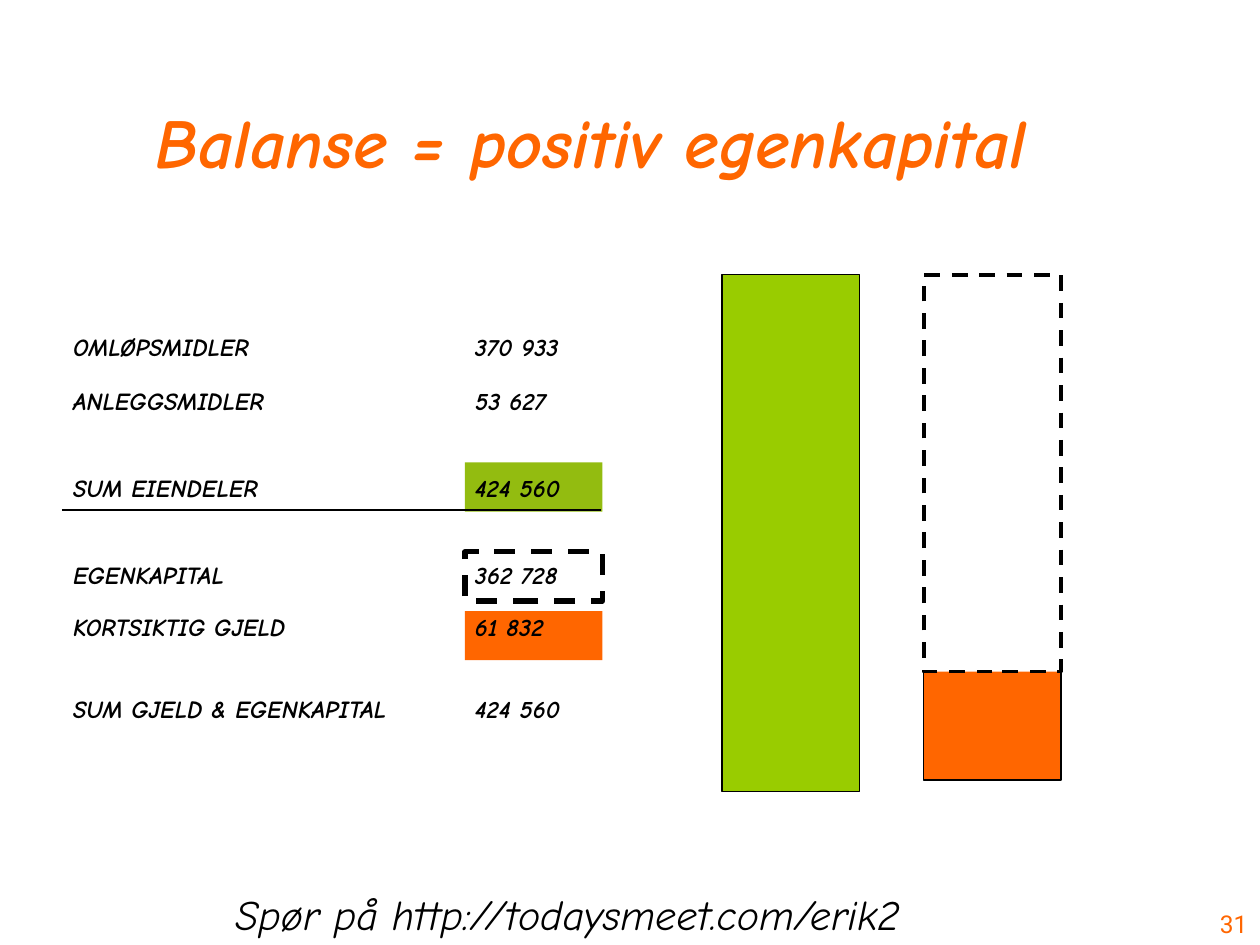
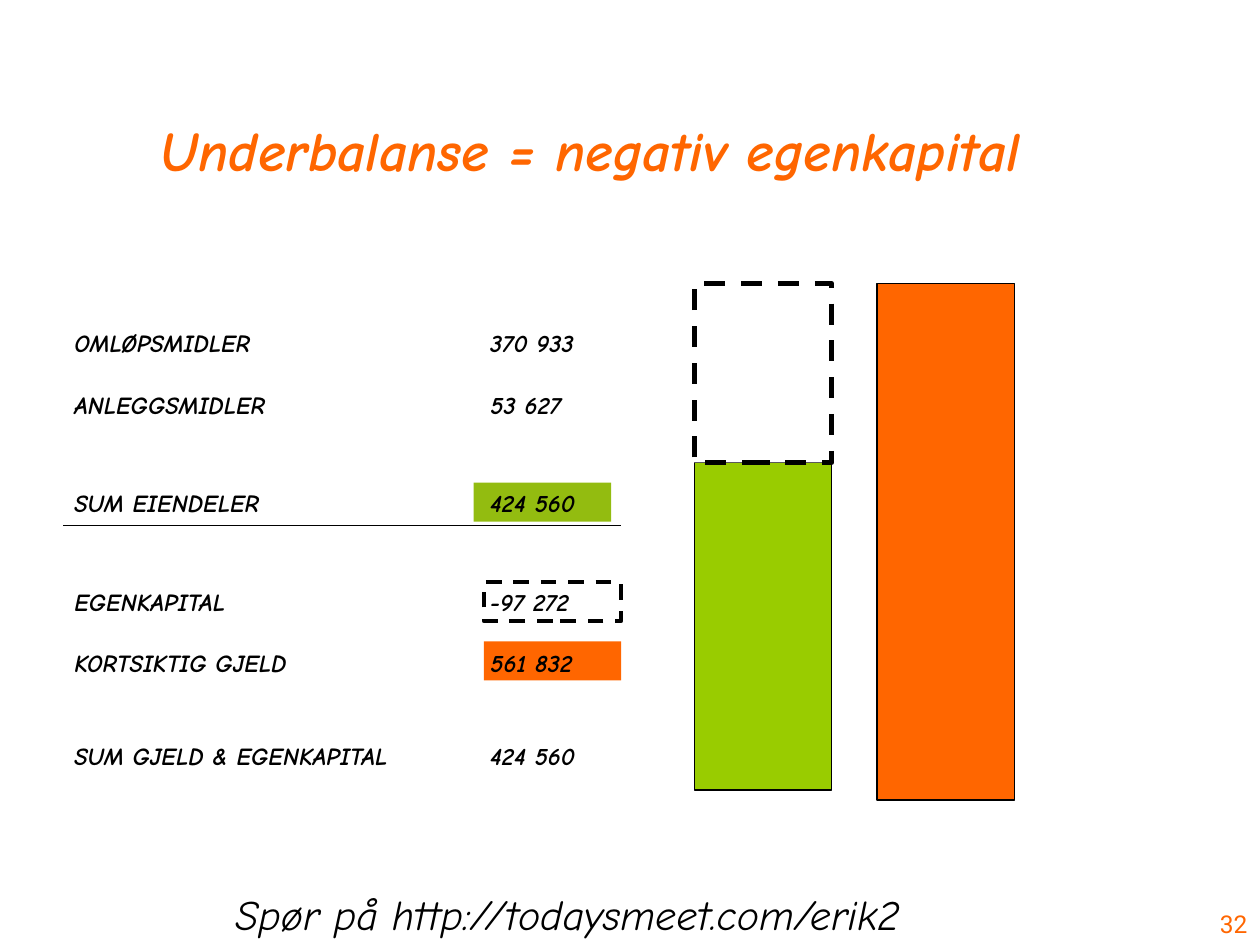
from lxml.etree import SubElement
from pptx import Presentation
from pptx.dml.color import RGBColor
from pptx.enum.dml import MSO_LINE
from pptx.enum.shapes import MSO_SHAPE
from pptx.enum.text import MSO_ANCHOR as Anchor, MSO_AUTO_SIZE as AutoSize, PP_ALIGN as Align
from pptx.oxml.ns import qn
from pptx.util import Inches, Pt

BLACK, WHITE = "000000", "FFFFFF"
ORANGE, GREEN, DARK_GREEN = "FF6600", "99CC00", "93BC10"
HAND, SANS = "Comic Neue", "Roboto"
PLAIN_TABLE = "{2D5ABB26-0587-4C30-8999-92F81FD0307C}"
BAR_WIDTH = 1.09

LABELS = ["OMLØPSMIDLER", "ANLEGGSMIDLER", None, "SUM EIENDELER", None,
          "EGENKAPITAL", "KORTSIKTIG GJELD", None, "SUM GJELD & EGENKAPITAL"]
SUM_ROW = LABELS.index("SUM EIENDELER")


def color(code):
    return RGBColor.from_string(code)


def inches(*lengths):
    return [Inches(length) for length in lengths]


class BalanceDeck:
    """Holds the shared style and the page being built."""

    TITLE = {"name": HAND, "bold": True, "italic": True}
    FOOTER = {"name": HAND, "size": Pt(24), "italic": True}
    NUMBER = {"name": SANS, "size": Pt(14)}
    CELL = {"name": HAND, "size": Pt(14), "bold": True, "italic": True}

    def __init__(self):
        self.deck = Presentation()
        self.deck.slide_width, self.deck.slide_height = inches(10, 7.5)
        self.page = None

    def set_text(self, frame, text, style, ink=BLACK, align=Align.LEFT):
        para = frame.paragraphs[0]
        para.alignment = align
        span = para.add_run()
        span.text = text
        for name, value in style.items():
            setattr(span.font, name, value)
        span.font.color.rgb = color(ink)

    def add_page(self, title, title_size, number):
        self.page = self.deck.slides.add_slide(self.deck.slide_layouts[5])
        box = self.page.shapes.title
        box.left, box.top, box.width, box.height = inches(0.44, 0.25, 8.5, 1.25)
        box.text_frame.auto_size = AutoSize.NONE
        box.text_frame.vertical_anchor = Anchor.BOTTOM
        self.set_text(box.text_frame, title, self.TITLE | {"size": Pt(title_size)},
                      ORANGE, Align.CENTER)
        self.text((1.77, 7, 6.17, 0.5), "Spør på http://todaysmeet.com/erik2",
                  self.FOOTER, wrap=False)
        self.text((9.33, 7, 0.67, 0.5), str(number), self.NUMBER,
                  ORANGE, Align.RIGHT, Anchor.BOTTOM)

    def text(self, place, text, style, ink=BLACK, align=Align.LEFT,
             anchor=Anchor.TOP, wrap=True):
        frame = self.page.shapes.add_textbox(*inches(*place)).text_frame
        frame.word_wrap = wrap
        frame.vertical_anchor = anchor
        self.set_text(frame, text, style, ink, align)

    def bar(self, left, top, height, fill=None, line=None, dashed=False):
        box = self.page.shapes.add_shape(
            MSO_SHAPE.RECTANGLE, *inches(left, top, BAR_WIDTH, height))
        box.shadow.inherit = False
        if fill:
            box.fill.solid()
            box.fill.fore_color.rgb = color(fill)
        else:
            box.fill.background()
        if line:
            box.line.color.rgb = color(BLACK)
            box.line.width = Pt(line)
            if dashed:
                box.line.dash_style = MSO_LINE.DASH
        else:
            box.line.fill.background()

    def table(self, left, top, widths, heights, amounts):
        """Balance sheet of labels and amounts, ruled below the sum of assets."""
        frame = self.page.shapes.add_table(
            len(LABELS), 2, *inches(left, top, sum(widths), sum(heights)))
        table = frame.table
        table.first_row = table.horz_banding = False
        frame._element.find(".//" + qn("a:tableStyleId")).text = PLAIN_TABLE
        for column, width in zip(table.columns, widths):
            column.width = Inches(width)
        values = iter(amounts)
        for index, (row, height, label) in enumerate(zip(table.rows, heights, LABELS)):
            row.height = Inches(height)
            texts = (label, next(values)) if label else (None, None)
            for cell, text in zip(row.cells, texts):
                self.fill_cell(cell, text, ruled=index == SUM_ROW)

    def fill_cell(self, cell, text, ruled):
        cell.vertical_anchor = Anchor.BOTTOM
        cell.margin_left = cell.margin_right = Inches(0.09)
        # Spacer rows stay low only without vertical margins.
        cell.margin_top = cell.margin_bottom = Inches(0.05 if text else 0)
        if text:
            self.set_text(cell.text_frame, text, self.CELL)
        if ruled:
            rule = SubElement(cell._tc.get_or_add_tcPr(), qn("a:lnB"), w=str(Pt(1)))
            fill = SubElement(rule, qn("a:solidFill"))
            SubElement(fill, qn("a:srgbClr"), val=BLACK)
        cell.fill.background()


def add_positive_equity(show):
    show.add_page("Balanse = positiv egenkapital", 40, 31)
    show.bar(5.73, 2.18, 4.1, GREEN, 0.75)
    show.bar(3.69, 3.67, 0.39, DARK_GREEN)
    show.bar(7.33, 5.32, 0.87, ORANGE, 0.75)
    show.bar(3.69, 4.85, 0.39, ORANGE)
    show.table(0.49, 2.49, [3.19, 1.09],
               [0.44, 0.43, 0.32, 0.37, 0.32, 0.37, 0.41, 0.32, 0.33],
               ["370 933", "53 627", "424 560", "362 728", "61 832", "424 560"])
    show.bar(7.33, 2.18, 3.15, WHITE, 2.25, dashed=True)
    show.bar(3.69, 4.38, 0.39, line=3, dashed=True)


def add_negative_equity(show):
    show.add_page("Underbalanse = negativ egenkapital", 32, 32)
    show.bar(6.96, 2.25, 4.1, ORANGE, 0.75)
    show.bar(3.84, 5.09, 0.31, ORANGE)
    show.bar(5.51, 3.67, 2.6, GREEN, 0.75)
    show.bar(3.76, 3.83, 0.31, DARK_GREEN)
    show.table(0.5, 2.41, [3.3, 1.13],
               [0.49, 0.49, 0.37, 0.41, 0.37, 0.41, 0.49, 0.37, 0.37],
               ["370 933", "53 627", "424 560", "-97 272", "561 832", "424 560"])
    show.bar(5.51, 2.25, 1.42, WHITE, 3, dashed=True)
    show.bar(3.84, 4.62, 0.31, line=2.25, dashed=True)


def main():
    show = BalanceDeck()
    add_positive_equity(show)
    add_negative_equity(show)
    show.deck.save("out.pptx")


if __name__ == "__main__":
    main()
